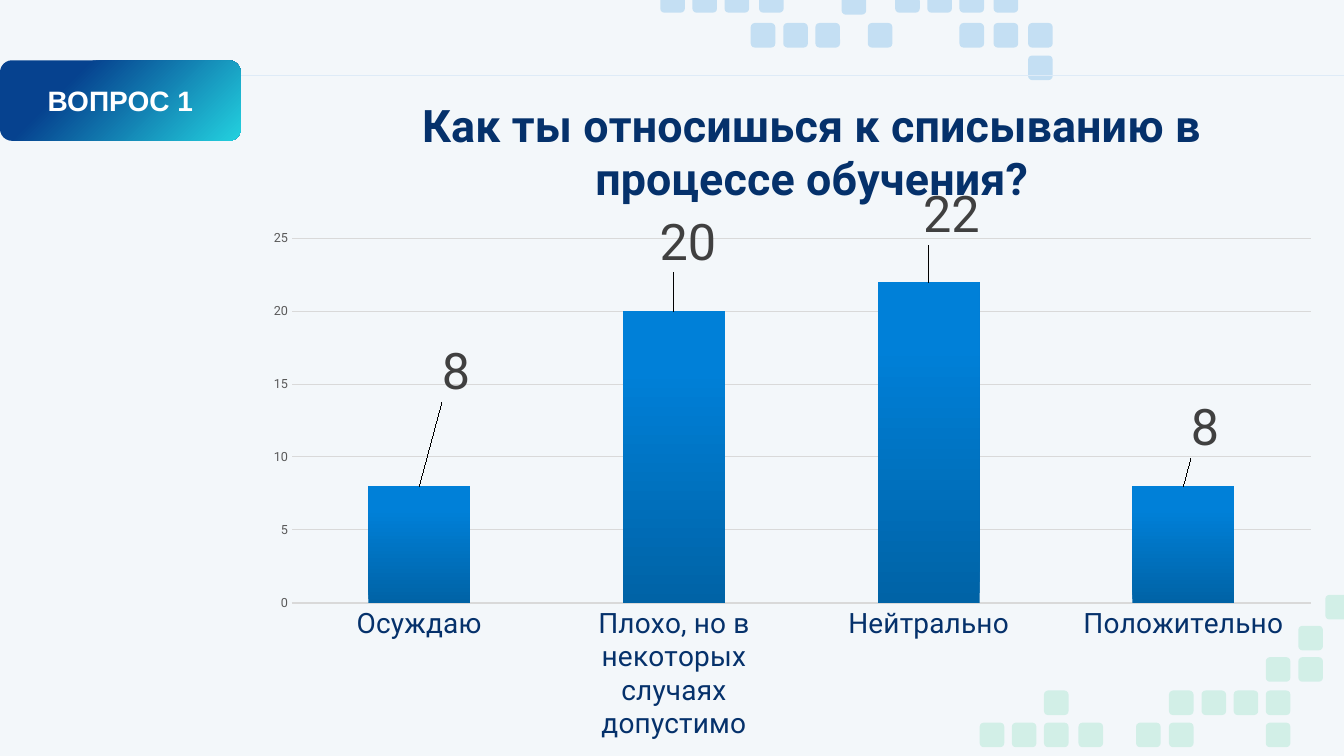
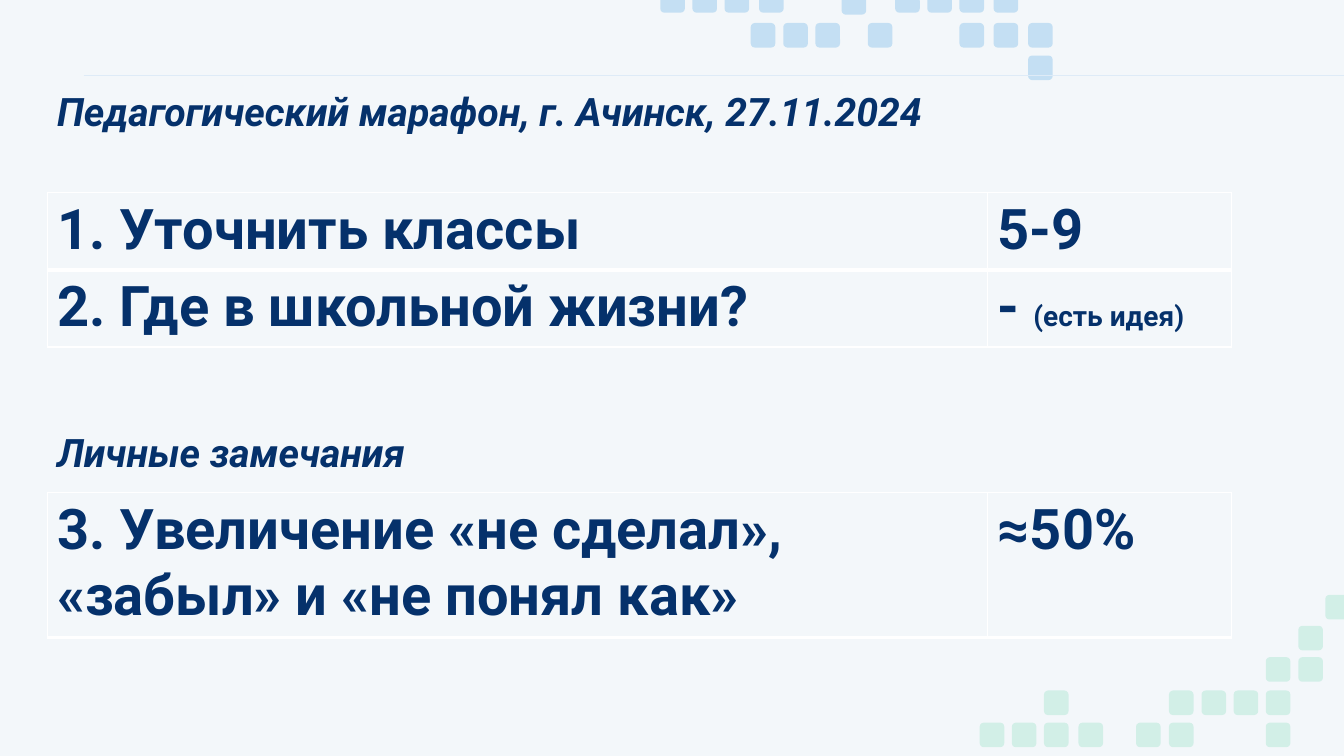
from pptx import Presentation
from pptx.chart.data import CategoryChartData
from pptx.dml.color import RGBColor
from pptx.enum.chart import XL_CHART_TYPE, XL_LABEL_POSITION, XL_TICK_MARK
from pptx.enum.shapes import MSO_CONNECTOR, MSO_SHAPE
from pptx.enum.text import MSO_ANCHOR, PP_ALIGN
from pptx.oxml.ns import qn
from pptx.oxml.xmlchemy import OxmlElement
from pptx.util import Cm, Pt

WIDTH, HEIGHT = 33.87, 19.05
LEFT = 1.19
SQUARE = 0.62
BLUE_ROWS = [
    (-0.3, [16.64, 17.45, 18.26, 19.13, 22.56, 23.37, 24.18, 25.04]),
    (-0.25, [21.21]),
    (0.58, [18.92, 19.74, 20.55, 21.87, 24.18, 25.04, 25.91]),
    (1.4, [25.91]),
]
GREEN_ROWS = [
    (14.99, [33.4]),
    (15.77, [32.72]),
    (16.56, [31.9, 32.72]),
    (17.4, [26.31, 29.46, 30.28, 31.09, 31.9]),
    (18.21, [24.69, 25.5, 26.31, 27.18, 28.63, 29.46, 31.9]),
]


def rgb(value):
    return RGBColor.from_string(value)


def add_child(parent, tag, **attrs):
    child = OxmlElement(tag)
    for name, value in attrs.items():
        child.set(name, str(value))
    parent.append(child)
    return child


def set_layout(element, index, **values):
    for old in element.findall(qn("c:layout")):
        element.remove(old)
    layout = OxmlElement("c:layout")
    manual = add_child(layout, "c:manualLayout")
    for name, value in values.items():
        add_child(manual, f"c:{name}", val=value)
    element.insert(index, layout)


def set_gradient(fill, stops, angle):
    fill.gradient()
    fill.gradient_angle = angle
    for stop, (position, color) in zip(fill.gradient_stops, stops):
        stop.position = position
        stop.color.rgb = rgb(color)


class Deck:
    font = "Roboto"
    navy, white = "05316B", "FFFFFF"
    blue, green = "0883D7", "4FD09F"
    grid, rule = "D9D9D9", "DEEBF7"

    def __init__(self):
        self.prs = Presentation()
        self.prs.slide_width, self.prs.slide_height = Cm(WIDTH), Cm(HEIGHT)
        fill = self.prs.slide_master.background.fill
        fill.solid()
        fill.fore_color.rgb = rgb("F3F7FA")

    def add_slide(self):
        self.s = self.prs.slides.add_slide(self.prs.slide_layouts[6])
        for color, rows in ((self.blue, BLUE_ROWS), (self.green, GREEN_ROWS)):
            for top, lefts in rows:
                for left in lefts:
                    self.square(left, top, color)
        self.top_rule()

    def style(self, font, size, color=None, **flags):
        font.name = flags.pop("name", self.font)
        font.size = Pt(size)
        font.color.rgb = rgb(color or self.navy)
        for flag, value in flags.items():
            setattr(font, flag, value)

    def rounded(self, left, top, width, height):
        sp = self.s.shapes.add_shape(MSO_SHAPE.ROUNDED_RECTANGLE,
                                     Cm(left), Cm(top), Cm(width), Cm(height))
        sp.shadow.inherit = False
        sp.line.fill.background()
        return sp

    def square(self, left, top, color):
        sp = self.rounded(left, top, SQUARE, SQUARE)
        sp.fill.solid()
        sp.fill.fore_color.rgb = rgb(color)
        clr = sp.fill._xPr.find(qn("a:solidFill"))[0]
        add_child(clr, "a:alpha", val=20000)

    def top_rule(self):
        line = self.s.shapes.add_connector(MSO_CONNECTOR.STRAIGHT,
                                           Cm(2.11), Cm(1.9), Cm(WIDTH), Cm(1.9))
        line.line.color.rgb = rgb(self.rule)
        line.line.width = Pt(0.82)
        add_child(line._element.spPr, "a:effectLst")

    def badge(self, text):
        sp = self.rounded(0, 1.52, 6.07, 2.03)
        sp.adjustments[0] = 0.15
        set_gradient(sp.fill, [(0.28, "06428F"), (1, "23D1DF")], 315)
        tf = sp.text_frame
        tf.text = text
        tf.vertical_anchor = MSO_ANCHOR.MIDDLE
        p = tf.paragraphs[0]
        p.alignment = PP_ALIGN.CENTER
        self.style(p.runs[0].font, 20, self.white, name="Arial", bold=True)

    def heading(self, text, top):
        sp = self.s.shapes.add_textbox(Cm(LEFT), Cm(top), Cm(26.06), Cm(1.45))
        tf = sp.text_frame
        tf.word_wrap = True
        tf.text = text
        self.style(tf.paragraphs[0].runs[0].font, 28, bold=True, italic=True)

    def table(self, rows, top, row_height):
        widths = [23.7, 6.15]
        frame = self.s.shapes.add_table(len(rows), len(widths), Cm(LEFT), Cm(top),
                                        Cm(sum(widths)), Cm(row_height * len(rows)))
        table = frame.table
        table.first_row = table.horz_banding = False
        for column, width in zip(table.columns, widths):
            column.width = Cm(width)
        for i, row in enumerate(rows):
            for j, parts in enumerate(row):
                self.cell(table.cell(i, j), parts, 3 if i == 0 else 1)

    def cell(self, cell, parts, bottom):
        p = cell.text_frame.paragraphs[0]
        for text, size in parts:
            r = p.add_run()
            r.text = text
            self.style(r.font, size, bold=True)
        cell.fill.background()
        tc_pr = cell._tc.get_or_add_tcPr()
        for i, (side, width) in enumerate(zip("LRTB", (1, 1, 1, bottom))):
            ln = OxmlElement(f"a:ln{side}")
            ln.set("w", str(Pt(width)))
            add_child(add_child(ln, "a:solidFill"), "a:srgbClr", val=self.white)
            tc_pr.insert(i, ln)

    def column_chart(self, title, points):
        data = CategoryChartData()
        data.categories = [name for name, _, _ in points]
        data.add_series("Series 1", [value for _, value, _ in points])
        chart = self.s.shapes.add_chart(XL_CHART_TYPE.COLUMN_CLUSTERED, Cm(6.35),
                                        Cm(1.68), Cm(27.23), Cm(17.37), data).chart
        self.style(chart.font, 10, "000000")
        area = OxmlElement("c:spPr")
        add_child(area, "a:noFill")
        add_child(add_child(area, "a:ln"), "a:noFill")
        chart._chartSpace.chart.addnext(area)
        chart.has_legend = False

        chart.has_title = True
        tf = chart.chart_title.text_frame
        tf.text = title
        self.style(tf.paragraphs[0].runs[0].font, 32, bold=True)
        set_layout(chart.chart_title._element, 1,
                   xMode="edge", yMode="edge", x=0.15, y=0.03)
        set_layout(chart._chartSpace.chart.plotArea, 0, layoutTarget="inner",
                   xMode="edge", yMode="edge", x=0.037, y=0.249, w=0.943, h=0.529)

        cat, val = chart.category_axis, chart.value_axis
        for axis, size, color in ((cat, 20, self.navy), (val, 9, "595959")):
            axis.major_tick_mark = axis.minor_tick_mark = XL_TICK_MARK.NONE
            self.style(axis.tick_labels.font, size, color)
        cat.format.line.color.rgb = rgb(self.grid)
        cat.format.line.width = Pt(1)
        val.format.line.fill.background()
        val.minimum_scale, val.maximum_scale, val.major_unit = 0, 25, 5
        val.has_major_gridlines = True
        val.major_gridlines.format.line.color.rgb = rgb(self.grid)
        val.major_gridlines.format.line.width = Pt(0.75)

        plot = chart.plots[0]
        plot.gap_width = 150
        plot.vary_by_categories = False
        series = plot.series[0]
        set_gradient(series.format.fill, [(0, "0063A6"), (0.8, "0080D8")], 90)
        series.data_labels.show_value = True
        self.style(series.data_labels.font, 36, "404040")
        for i in range(len(points)):
            label = series.points[i].data_label
            self.style(label.font, 36, "404040")
            label.position = XL_LABEL_POSITION.OUTSIDE_END
        labels = series.data_labels._element.findall(qn("c:dLbl"))
        for label, (_, _, (x, y)) in zip(labels, points):
            set_layout(label, 1, x=x, y=y)


def main():
    deck = Deck()

    deck.add_slide()
    deck.badge("ВОПРОС 1")
    deck.column_chart("Как ты относишься к списыванию в процессе обучения?", [
        ("Осуждаю", 8, (0.034, -0.116)),
        ("Плохо, но в некоторых случаях допустимо", 20, (0.013, -0.05)),
        ("Нейтрально", 22, (0.021, -0.048)),
        ("Положительно", 8, (0.02, -0.035)),
    ])

    deck.add_slide()
    deck.heading("Педагогический марафон, г. Ачинск, 27.11.2024", 2.08)
    deck.table([
        [[("1. Уточнить классы", 40)], [("5-9", 40)]],
        [[("2. Где в школьной жизни?", 40)], [("- ", 40), ("(есть идея)", 20)]],
    ], 4.85, 1.94)
    deck.heading("Личные замечания", 10.67)
    deck.table([
        [[("3. Увеличение «не сделал», «забыл» и «не понял как»", 40)], [("≈50%", 40)]],
    ], 12.42, 3.64)

    deck.prs.save("out.pptx")


if __name__ == "__main__":
    main()
